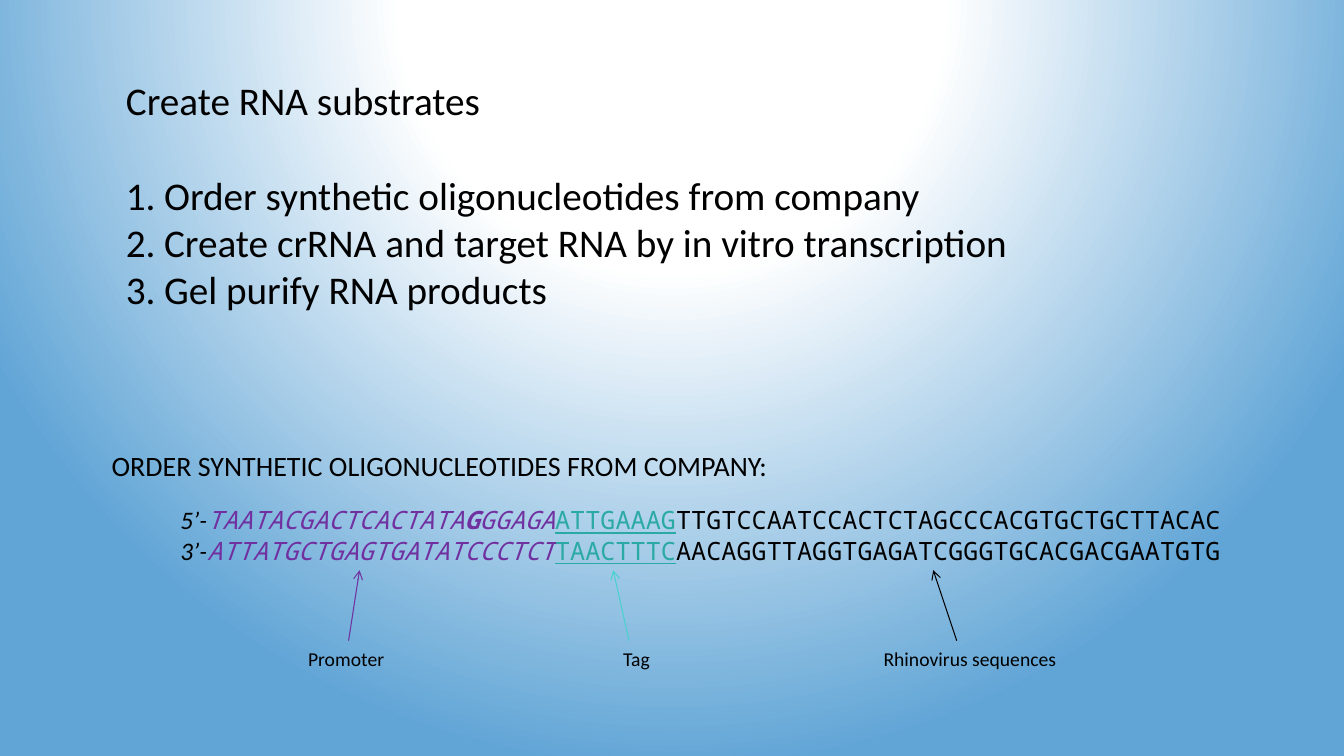
import pptx
import pptx.dml.color
import pptx.enum.shapes
import pptx.enum.text
import pptx.oxml
import pptx.oxml.ns
import pptx.util
from lxml import etree

BLACK, PURPLE, TEAL, AQUA = "000000", "7030A0", "2BA9A5", "49D1CD"
BODY_FONT, SEQUENCE_FONT = "Calibri", "Noto Sans Mono"

BACKGROUND = f"""
<p:bg {pptx.oxml.ns.nsdecls("p", "a")}><p:bgPr>
  <a:gradFill rotWithShape="1">
    <a:gsLst>
      <a:gs pos="0"><a:srgbClr val="FFFFFF"/></a:gs>
      <a:gs pos="35000"><a:srgbClr val="FFFFFF"/></a:gs>
      <a:gs pos="100000"><a:srgbClr val="61A5D6"/></a:gs>
    </a:gsLst>
    <a:path path="circle">
      <a:fillToRect l="50000" t="-80000" r="50000" b="180000"/>
    </a:path>
  </a:gradFill>
  <a:effectLst/>
</p:bgPr></p:bg>"""

STEPS = [
    "Order synthetic oligonucleotides from company",
    "Create crRNA and target RNA by in vitro transcription",
    "Gel purify RNA products",
]

END = {"italic": True}
PROMOTER = {"name": SEQUENCE_FONT, "color": PURPLE, "italic": True}
START_BASE = {**PROMOTER, "bold": True}
TAG = {"name": SEQUENCE_FONT, "color": TEAL, "underline": True}
VIRUS = {"name": SEQUENCE_FONT}
STRANDS = [
    [("5’-", END), ("TAATACGACTCACTATA", PROMOTER), ("G", START_BASE),
     ("GGAGA", PROMOTER), ("ATTGAAAG", TAG),
     ("TTGTCCAATCCACTCTAGCCCACGTGCTGCTTACAC", VIRUS)],
    [("3’-", END), ("ATTATGCTGAGTGATATCCCTCT", PROMOTER), ("TAACTTTC", TAG),
     ("AACAGGTTAGGTGAGATCGGGTGCACGACGAATGTG", VIRUS)],
]

# Label, its left column and width, arrow tip column, arrow foot column, colour
CALLOUTS = [
    ("Promoter", 3.55, 1.33, 4.28, 4.15, PURPLE),
    ("Tag", 7.3, 0.68, 7.3, 7.49, AQUA),
    ("Rhinovirus sequences", 10.4, 2.35, 11.11, 11.39, BLACK),
]
TIP_ROW, FOOT_ROW = 6.79, 7.63


def rgb(color):
    return pptx.dml.color.RGBColor.from_string(color)


class SlideBuilder:
    """Places styled elements on a slide by a grid of 16 columns and 9 rows."""

    def __init__(self, presentation):
        self.cell = presentation.slide_width / 16
        self.slide = presentation.slides.add_slide(presentation.slide_layouts[5])
        self.style = {"name": BODY_FONT, "color": BLACK, "bold": False, "italic": False}

    def grid(self, *cells):
        return [pptx.util.Emu(round(cell * self.cell)) for cell in cells]

    def background(self, xml):
        self.slide.element.cSld.insert(0, pptx.oxml.parse_xml(xml))

    def fill_frame(self, frame, paragraphs, size, wrap, numbered=False):
        """Fill a text frame; each paragraph is a list of (text, format) runs."""
        frame.word_wrap = wrap
        frame.auto_size = pptx.enum.text.MSO_AUTO_SIZE.NONE
        frame.vertical_anchor = pptx.enum.text.MSO_ANCHOR.TOP
        for index, runs in enumerate(paragraphs):
            paragraph = frame.add_paragraph() if index else frame.paragraphs[0]
            paragraph.alignment = pptx.enum.text.PP_ALIGN.LEFT
            if numbered:
                self.number(paragraph)
            for text, run_format in runs:
                run = paragraph.add_run()
                run.text = text
                values = {**self.style, "size": pptx.util.Pt(size), **run_format}
                run.font.color.rgb = rgb(values.pop("color"))
                for attribute, value in values.items():
                    setattr(run.font, attribute, value)

    def number(self, paragraph):
        properties = paragraph._p.get_or_add_pPr()
        indent = pptx.util.Inches(0.38)
        properties.set("marL", str(indent))
        properties.set("indent", str(-indent))
        etree.SubElement(properties, pptx.oxml.ns.qn("a:buAutoNum"), type="arabicPeriod")

    def title(self, text, box, size):
        shape = self.slide.shapes.title
        shape.left, shape.top, shape.width, shape.height = self.grid(*box)
        self.fill_frame(shape.text_frame, [[(text, {})]], size, wrap=True)

    def text(self, paragraphs, box, size, wrap=True, numbered=False):
        shape = self.slide.shapes.add_textbox(*self.grid(*box))
        self.fill_frame(shape.text_frame, paragraphs, size, wrap, numbered)

    def arrow(self, tip, foot, color):
        connector = self.slide.shapes.add_connector(
            pptx.enum.shapes.MSO_CONNECTOR.STRAIGHT, *self.grid(*tip, *foot))
        connector.line.color.rgb = rgb(color)
        connector.line.width = pptx.util.Pt(0.75)
        etree.SubElement(connector.line._ln, pptx.oxml.ns.qn("a:headEnd"), type="arrow")
        etree.SubElement(connector._element.spPr, pptx.oxml.ns.qn("a:effectLst"))


def main():
    presentation = pptx.Presentation()
    presentation.slide_width = pptx.util.Inches(13.33)
    presentation.slide_height = pptx.util.Inches(7.5)

    builder = SlideBuilder(presentation)
    builder.background(BACKGROUND)
    builder.title("Create RNA substrates", (1.38, 0.85, 10.85, 0.68), 28)
    builder.text([[(step, {})] for step in STEPS], (1.38, 1.98, 10.85, 1.82), 28,
                 numbered=True)
    builder.text([[("ORDER SYNTHETIC OLIGONUCLEOTIDES FROM COMPANY:", {})]],
                 (1.21, 5.28, 8.11, 0.53), 20, wrap=False)
    builder.text(STRANDS, (2.03, 5.95, 12.89, 0.85), 18)
    for label, left, width, tip, foot, color in CALLOUTS:
        builder.arrow((tip, TIP_ROW), (foot, FOOT_ROW), color)
        builder.text([[(label, {})]], (left, 7.64, width, 0.41), 14)

    presentation.save("out.pptx")


if __name__ == "__main__":
    main()
